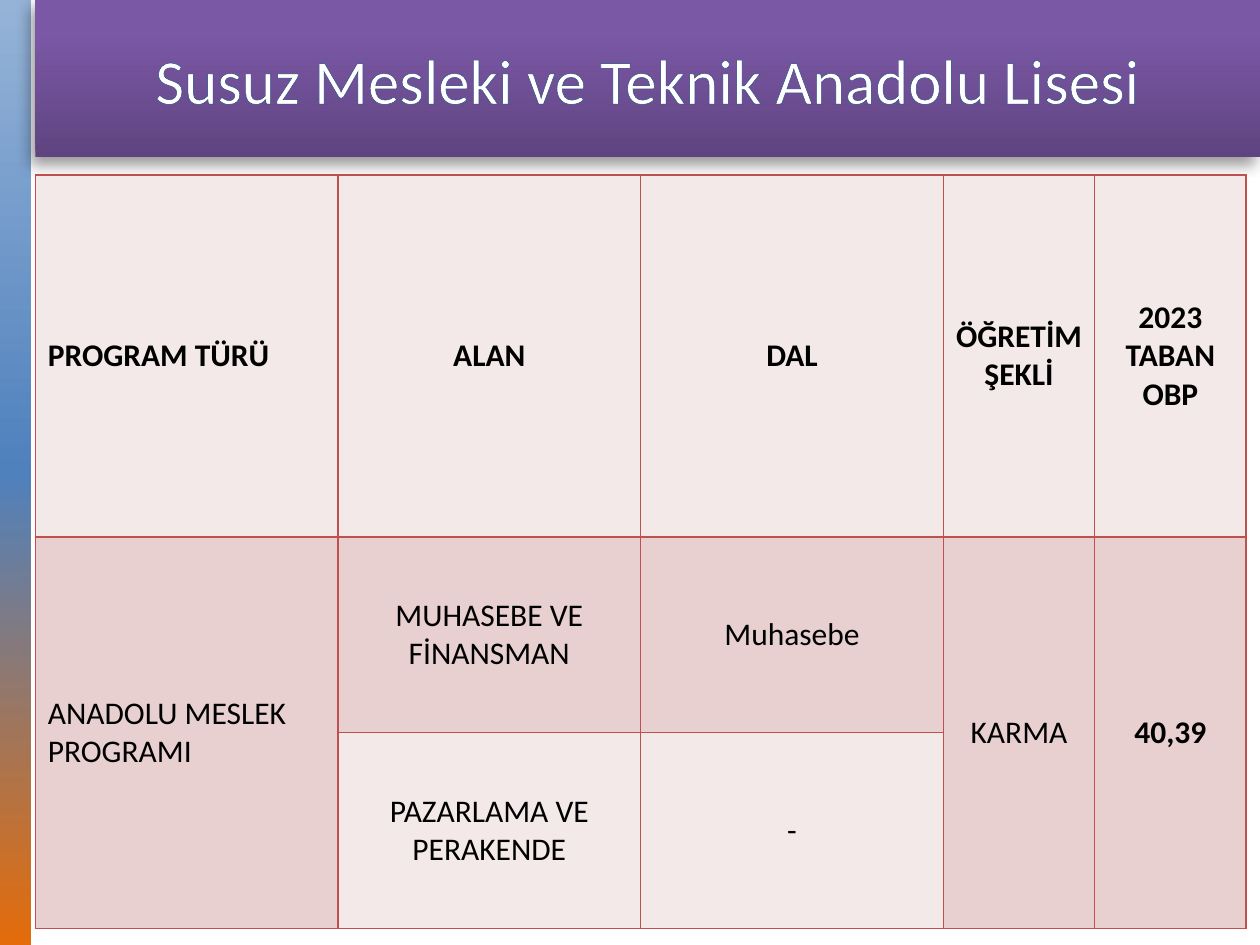
from dataclasses import dataclass

from pptx import Presentation
from pptx.dml.color import RGBColor
from pptx.enum.shapes import MSO_SHAPE
from pptx.enum.text import MSO_ANCHOR, PP_ALIGN
from pptx.oxml import parse_xml
from pptx.oxml.ns import nsdecls
from pptx.util import Inches, Pt

RECTANGLE = MSO_SHAPE.RECTANGLE
MIDDLE = MSO_ANCHOR.MIDDLE
LEFT, CENTER = PP_ALIGN.LEFT, PP_ALIGN.CENTER
BLANK_LAYOUT = 6
SLIDE_WIDTH, SLIDE_HEIGHT = Inches(10), Inches(7.5)
RAIL_BOX = (0, 0, Inches(0.25), SLIDE_HEIGHT)
CONTENT_LEFT = Inches(0.28)
TITLE_BOX = (CONTENT_LEFT, 0, SLIDE_WIDTH - CONTENT_LEFT, SLIDE_HEIGHT // 6)
TABLE_BOX = (CONTENT_LEFT, Inches(1.39), Inches(9.61), Inches(5.98))
COLUMN_UNITS = (2, 2, 2, 1, 1)
ROW_SHARES = (0.48, 0.26, 0.26)
TITLE = "Susuz Mesleki ve Teknik Anadolu Lisesi"
PROGRAMS = (
    ("PROGRAM TÜRÜ", "ALAN", "DAL", "ÖĞRETİM ŞEKLİ", "2023 TABAN OBP"),
    ("ANADOLU MESLEK PROGRAMI", "MUHASEBE VE FİNANSMAN", "Muhasebe", "KARMA", "40,39"),
    ("", "PAZARLAMA VE PERAKENDE", "-", "", ""),
)
MERGED_COLUMNS = (0, 3, 4)
SCORE_COLUMN = 4


@dataclass(frozen=True)
class Theme:
    """Colours and type sizes of the slide."""

    font: str = "Calibri"
    title_size: int = 36
    table_size: int = 18
    title_color: str = "FFFFFF"
    title_outline: str = "1F497D"
    text_color: str = "000000"
    border: str = "C0504D"
    bands: tuple = ("F4E9E9", "E8D0D0")
    rail: tuple = ((0, "95B3D7"), (50, "4F81BD"), (100, "E46C0A"))
    header: tuple = ((0, "5F4480"), (80, "7B58A6"), (100, "7C57A8"))


THEME = Theme()


def line_xml(tag, color):
    """Return a one-point solid line element."""
    return parse_xml(
        f'<a:{tag} {nsdecls("a")} w="{Pt(1)}"><a:solidFill>'
        f'<a:srgbClr val="{color}"/></a:solidFill></a:{tag}>'
    )


def add_gradient_bar(slide, box, stops, angle):
    """Add a borderless rectangle with a linear gradient."""
    shape = slide.shapes.add_shape(RECTANGLE, *box)
    shape.shadow.inherit = False
    shape.line.fill.background()
    stop_list = "".join(
        f'<a:gs pos="{position * 1000}"><a:srgbClr val="{color}"/></a:gs>'
        for position, color in stops
    )
    gradient = parse_xml(
        f'<a:gradFill {nsdecls("a")} rotWithShape="1"><a:gsLst>{stop_list}</a:gsLst>'
        f'<a:lin ang="{angle * 60000}" scaled="0"/></a:gradFill>'
    )
    shape._element.spPr.find(".//{*}prstGeom").addnext(gradient)
    return shape


def format_paragraph(paragraph, size, color, alignment, bold=False):
    """Align a paragraph and format its runs."""
    paragraph.alignment = alignment
    for run in paragraph.runs:
        run.font.name = THEME.font
        run.font.size = Pt(size)
        run.font.bold = bold
        run.font.color.rgb = RGBColor.from_string(color)


def add_title(slide, box):
    """Add the shaded title banner with its outlined text."""
    shape = add_gradient_bar(slide, box, THEME.header, 270)
    shape._element.spPr.find("{*}effectLst").append(parse_xml(
        f'<a:outerShdw {nsdecls("a")} blurRad="{Pt(8)}" dist="{Pt(5)}" '
        f'dir="{135 * 60000}" algn="tr" rotWithShape="0"><a:srgbClr val="000000">'
        '<a:alpha val="40000"/></a:srgbClr></a:outerShdw>'
    ))
    text_frame = shape.text_frame
    text_frame.text = TITLE
    text_frame.word_wrap = True
    text_frame.vertical_anchor = MIDDLE
    paragraph = text_frame.paragraphs[0]
    format_paragraph(paragraph, THEME.title_size, THEME.title_color, CENTER)
    properties = paragraph.runs[0]._r.get_or_add_rPr()
    properties.insert(0, line_xml("ln", THEME.title_outline))


def format_cell(cell, text, fill, alignment, bold):
    """Write one table cell with its borders and fill."""
    properties = cell._tc.get_or_add_tcPr()
    for tag in ("lnL", "lnR", "lnT", "lnB"):
        properties.append(line_xml(tag, THEME.border))
    cell.fill.solid()
    cell.fill.fore_color.rgb = RGBColor.from_string(fill)
    cell.vertical_anchor = MIDDLE
    cell.text_frame.text = text
    format_paragraph(
        cell.text_frame.paragraphs[0], THEME.table_size, THEME.text_color, alignment, bold
    )


def add_program_table(slide, box):
    """Add the program table with its merged cells."""
    width, height = box[2:]
    table = slide.shapes.add_table(len(ROW_SHARES), len(COLUMN_UNITS), *box).table
    table.first_row = table.horz_banding = False
    for column, units in zip(table.columns, COLUMN_UNITS):
        column.width = width * units // sum(COLUMN_UNITS)
    for row, share in zip(table.rows, ROW_SHARES):
        row.height = int(height * share)
    for row_index, texts in enumerate(PROGRAMS):
        for column_index, text in enumerate(texts):
            format_cell(
                table.cell(row_index, column_index),
                text,
                THEME.bands[row_index % 2],
                CENTER if column_index else LEFT,
                row_index == 0 or column_index == SCORE_COLUMN,
            )
    for column_index in MERGED_COLUMNS:
        table.cell(1, column_index).merge(table.cell(2, column_index))


def main():
    """Build and save the presentation."""
    presentation = Presentation()
    presentation.slide_width, presentation.slide_height = SLIDE_WIDTH, SLIDE_HEIGHT
    slide = presentation.slides.add_slide(presentation.slide_layouts[BLANK_LAYOUT])
    add_gradient_bar(slide, RAIL_BOX, THEME.rail, 90)
    add_title(slide, TITLE_BOX)
    add_program_table(slide, TABLE_BOX)
    presentation.save("out.pptx")


if __name__ == "__main__":
    main()
